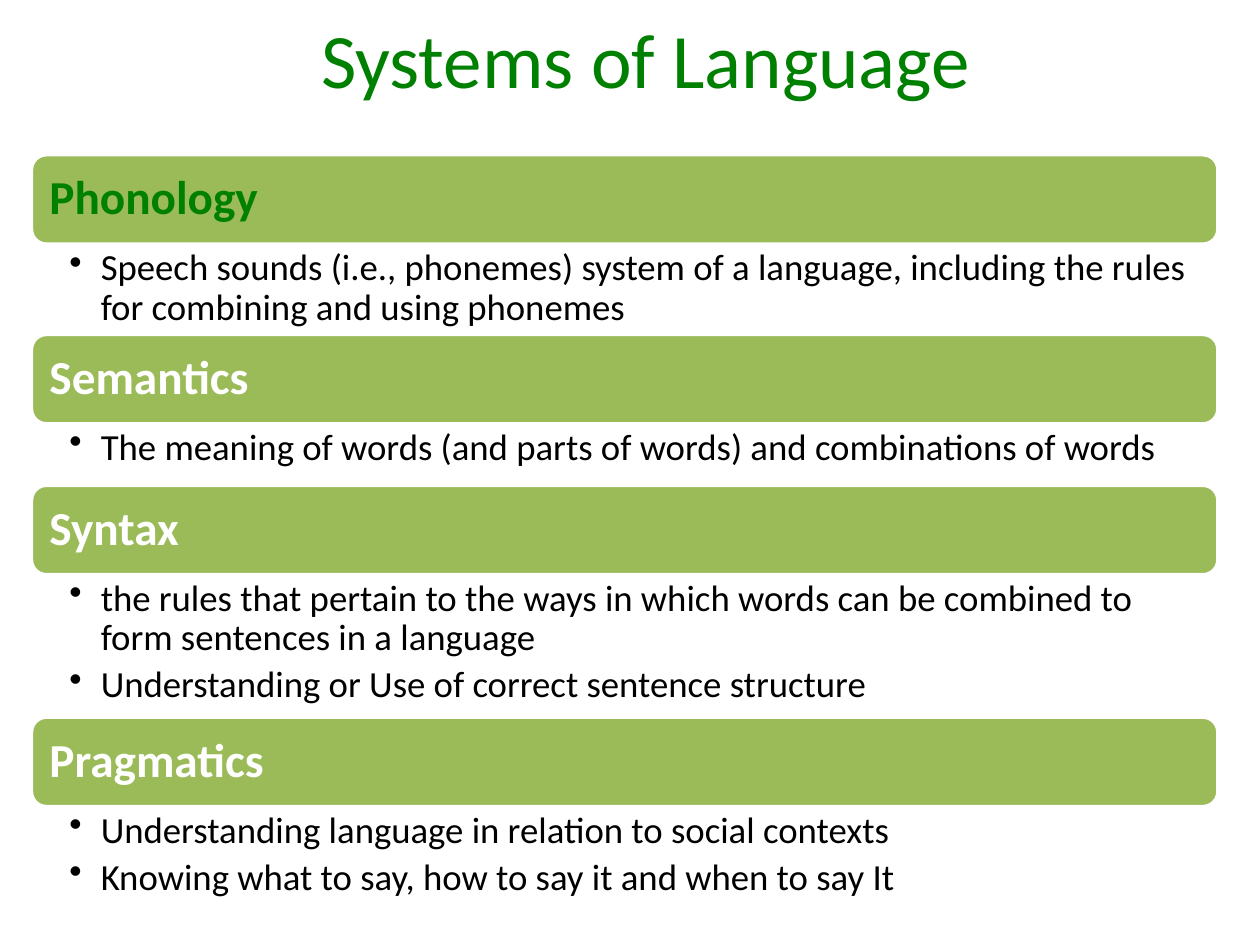
import pptx
import pptx.dml.color
import pptx.enum.shapes
import pptx.enum.text
import pptx.oxml
import pptx.oxml.ns
import pptx.util

Pt = pptx.util.Pt
ANCHOR = pptx.enum.text.MSO_ANCHOR
ALIGN = pptx.enum.text.PP_ALIGN

LEFT, WIDTH = 18, 678
FIRST_TOP = 88.4
HEADING_HEIGHT = 51.1
GREEN, OLIVE, WHITE, BLACK = "008000", "9BBB59", "FFFFFF", "000000"

SECTIONS = [
    ("Phonology", GREEN, 51.6, [
        "Speech sounds (i.e., phonemes) system of a language, including the rules "
        "for combining and using phonemes"]),
    ("Semantics", WHITE, 35.1, [
        "The meaning of words (and parts of words) and combinations of words"]),
    ("Syntax", WHITE, 81.4, [
        "the rules that pertain to the ways in which words can be combined to "
        "form sentences in a language",
        "Understanding or Use of correct sentence structure"]),
    ("Pragmatics", WHITE, 56.9, [
        "Understanding language in relation to social contexts",
        "Knowing what to say, how to say it and when to say It"]),
]


def color(value):
    return pptx.dml.color.RGBColor.from_string(value)


def set_frame(shape, anchor, left, top, right, bottom):
    frame = shape.text_frame
    frame.word_wrap = True
    frame.vertical_anchor = anchor
    frame.margin_left, frame.margin_top = Pt(left), Pt(top)
    frame.margin_right, frame.margin_bottom = Pt(right), Pt(bottom)
    return frame


def add_run(paragraph, text, size, value, bold=False):
    run = paragraph.add_run()
    run.text = text
    run.font.name = "Calibri"
    run.font.size = Pt(size)
    run.font.bold = bold
    run.font.color.rgb = color(value)


def set_bullet(paragraph, indent):
    properties = paragraph._p.get_or_add_pPr()
    properties.set("marL", str(Pt(indent)))
    properties.set("indent", str(-Pt(indent)))
    bullet = pptx.oxml.parse_xml(
        f'<a:buChar {pptx.oxml.ns.nsdecls("a")} char="•"/>')
    properties.append(bullet)


def add_title(slide, text):
    box = slide.shapes.add_textbox(Pt(18), Pt(0), Pt(702), Pt(66))
    paragraph = set_frame(box, ANCHOR.MIDDLE, 7.2, 3.6, 7.2, 3.6).paragraphs[0]
    paragraph.alignment = ALIGN.CENTER
    add_run(paragraph, text, 44, GREEN)


def add_heading(slide, top, text, text_color):
    shape = slide.shapes.add_shape(
        pptx.enum.shapes.MSO_SHAPE.ROUNDED_RECTANGLE,
        Pt(LEFT), Pt(top), Pt(WIDTH), Pt(HEADING_HEIGHT))
    shape.shadow.inherit = False
    shape.fill.solid()
    shape.fill.fore_color.rgb = color(OLIVE)
    shape.line.color.rgb = color(WHITE)
    shape.line.width = Pt(2)
    paragraph = set_frame(shape, ANCHOR.MIDDLE, 7.8, 7.8, 7.8, 7.8).paragraphs[0]
    paragraph.alignment = ALIGN.LEFT
    paragraph.line_spacing = 0.9
    add_run(paragraph, text, 27, text_color, bold=True)


def add_bullets(slide, top, height, texts):
    box = slide.shapes.add_textbox(Pt(LEFT), Pt(top), Pt(WIDTH), Pt(height))
    frame = set_frame(box, ANCHOR.TOP, 21.6, 2.7, 15, 2.7)
    for index, text in enumerate(texts):
        paragraph = frame.add_paragraph() if index else frame.paragraphs[0]
        paragraph.level = 1
        paragraph.line_spacing = 0.9
        paragraph.space_after = Pt(4.2)
        set_bullet(paragraph, 18)
        add_run(paragraph, text, 21, BLACK)


def main():
    presentation = pptx.Presentation()
    presentation.slide_width, presentation.slide_height = Pt(720), Pt(540)
    slide = presentation.slides.add_slide(presentation.slide_layouts[6])
    add_title(slide, "Systems of Language")
    top = FIRST_TOP
    for heading, heading_color, body_height, texts in SECTIONS:
        add_heading(slide, top, heading, heading_color)
        add_bullets(slide, top + HEADING_HEIGHT, body_height, texts)
        top += HEADING_HEIGHT + body_height
    presentation.save("out.pptx")


if __name__ == "__main__":
    main()
